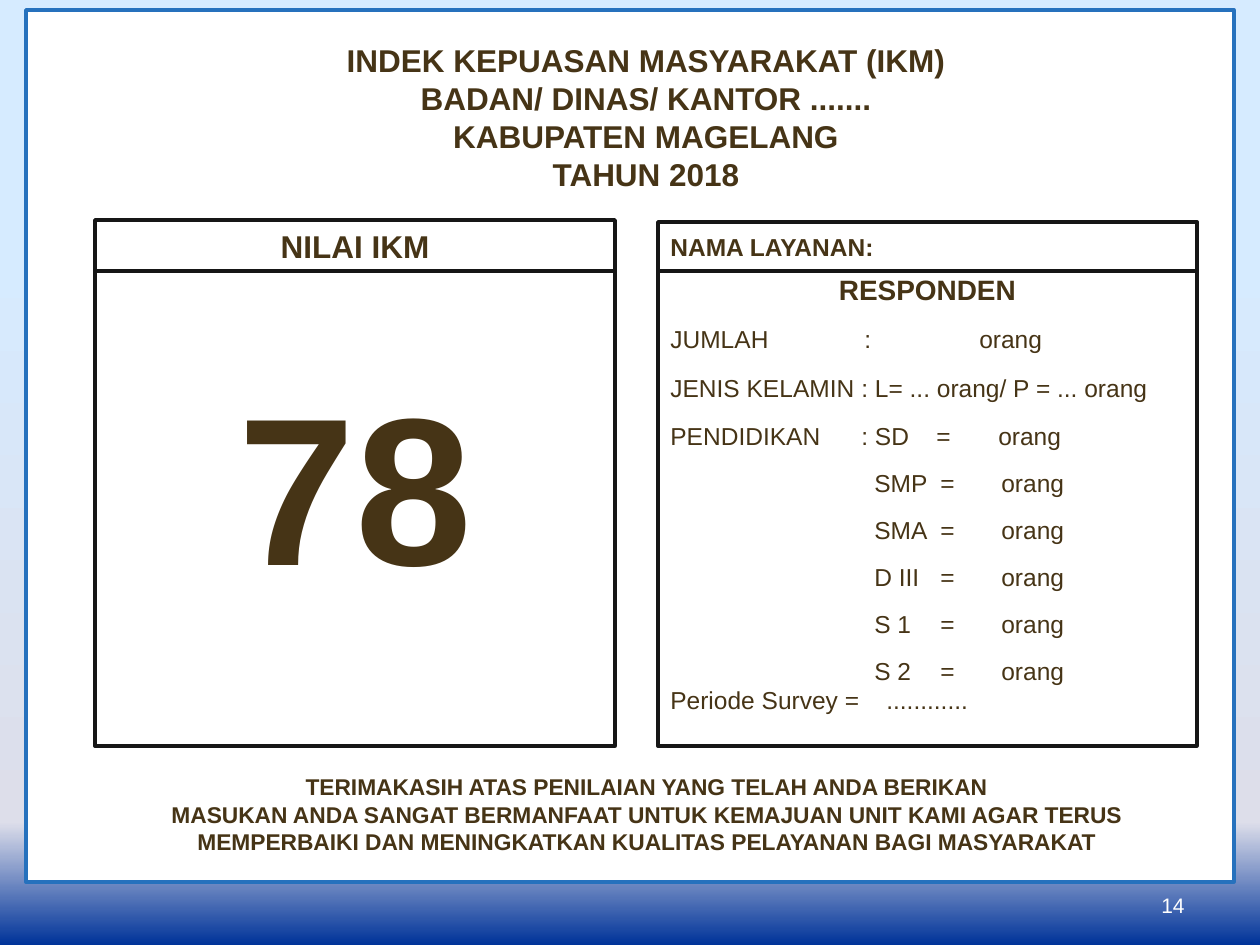
from lxml import etree
from pptx import Presentation
from pptx.dml.color import RGBColor
from pptx.enum.shapes import MSO_SHAPE
from pptx.enum.text import MSO_ANCHOR, PP_ALIGN
from pptx.oxml.ns import qn
from pptx.util import Emu, Pt

RECT = MSO_SHAPE.RECTANGLE
TOP, MIDDLE, BOTTOM = MSO_ANCHOR.TOP, MSO_ANCHOR.MIDDLE, MSO_ANCHOR.BOTTOM
LEFT, CENTER, RIGHT = PP_ALIGN.LEFT, PP_ALIGN.CENTER, PP_ALIGN.RIGHT
EMU_PER_PX = 914400 / 126
FONT = "Arial"
COLORS = {"white": "FFFFFF", "text": "463416", "frame": "2671BD", "border": "161616",
          "sky": "D6EBFF", "haze": "DDDEEA", "navy": "003399"}

TITLE = ["INDEK KEPUASAN MASYARAKAT (IKM)", "BADAN/ DINAS/ KANTOR .......",
         "KABUPATEN MAGELANG", "TAHUN 2018"]
THANKS = ["TERIMAKASIH ATAS PENILAIAN YANG TELAH ANDA BERIKAN",
          "MASUKAN ANDA SANGAT BERMANFAAT UNTUK KEMAJUAN UNIT KAMI AGAR TERUS "
          "MEMPERBAIKI DAN MENINGKATKAN KUALITAS PELAYANAN BAGI MASYARAKAT"]
LEVELS = ["SMP", "SMA", "D III", "S 1", "S 2"]
LEVEL_TABS = [204, 270, 331]
RESPONDENTS = [
    ("JUMLAH\t:\torang", 10, [194, 309]),
    ("JENIS KELAMIN\t: L= ... orang/ P = ... orang", 11, [191]),
    ("PENDIDIKAN\t: SD\t=\torang", 11, [191, 266, 328]),
    *[(f"\t{level}\t=\torang", 10, LEVEL_TABS) for level in LEVELS],
    ("Periode Survey =\t............", 0, [216]),
]


def px(n):
    return Emu(round(n * EMU_PER_PX))


def rgb(name):
    return RGBColor.from_string(COLORS[name])


def set_background(s, stops):
    fill = s.background.fill
    fill.gradient()
    fill.gradient_angle = 270
    gs_list = s.background._cSld.find(".//" + qn("a:gsLst"))
    for gs in list(gs_list):
        gs_list.remove(gs)
    for percent, color in stops:
        gs = etree.SubElement(gs_list, qn("a:gs"), pos=str(percent * 1000))
        etree.SubElement(gs, qn("a:srgbClr"), val=COLORS[color])


def add_box(s, x, y, w, h, line):
    sp = s.shapes.add_shape(RECT, px(x), px(y), px(w), px(h))
    sp.shadow.inherit = False
    sp.fill.solid()
    sp.fill.fore_color.rgb = rgb("white")
    sp.line.color.rgb = rgb(line)
    sp.line.width = Pt(2)
    return sp


def add_label(s, x, y, w, h):
    return s.shapes.add_textbox(px(x), px(y), px(w), px(h))


def add_paragraph(tf, text, size, align=LEFT, bold=True, color="text", before=0, tabs=()):
    p = tf.paragraphs[0]
    if p.runs:
        p = tf.add_paragraph()
    p.alignment = align
    p.space_before = Pt(before)
    if tabs:
        tab_list = etree.SubElement(p._p.get_or_add_pPr(), qn("a:tabLst"))
        for stop in tabs:
            etree.SubElement(tab_list, qn("a:tab"), pos=str(int(px(stop))), algn="l")
    r = p.add_run()
    r.text = text
    r.font.name = FONT
    r.font.size = Pt(size)
    r.font.bold = bold
    r.font.color.rgb = rgb(color)


def write(sp, lines, size, align=CENTER, anchor=MIDDLE, **style):
    tf = sp.text_frame
    tf.word_wrap = True
    tf.vertical_anchor = anchor
    for line in lines:
        add_paragraph(tf, line, size, align, **style)


def add_respondents(s, x, y, w, h):
    sp = add_box(s, x, y, w, h, "border")
    sp.text_frame.margin_top = px(2)
    write(sp, ["RESPONDEN"], 16, anchor=TOP)
    for text, before, tabs in RESPONDENTS:
        add_paragraph(sp.text_frame, text, 14, bold=False, before=before, tabs=tabs)


def main():
    prs = Presentation()
    prs.slide_width, prs.slide_height = px(1260), px(945)
    s = prs.slides.add_slide(prs.slide_layouts[6])
    set_background(s, [(26, "sky"), (87, "haze"), (100, "navy")])

    write(add_label(s, 903, 861, 294, 63), ["14"], 12, RIGHT, BOTTOM,
          bold=False, color="white")
    add_box(s, 26, 10, 1208, 872, "frame")
    write(add_box(s, 95, 220, 520, 51, "border"), ["NILAI IKM"], 18)
    write(add_box(s, 658, 222, 539, 49, "border"), ["NAMA LAYANAN:"], 14, LEFT)
    add_box(s, 95, 271, 520, 475, "border")
    add_respondents(s, 658, 271, 539, 475)
    write(add_box(s, 95, 767, 1102, 94, "white"), THANKS, 13)
    write(add_label(s, 140, 349, 431, 267), ["78"], 120, anchor=TOP)
    write(add_box(s, 95, 32, 1102, 170, "white"), TITLE, 18)

    prs.save("out.pptx")


if __name__ == "__main__":
    main()
